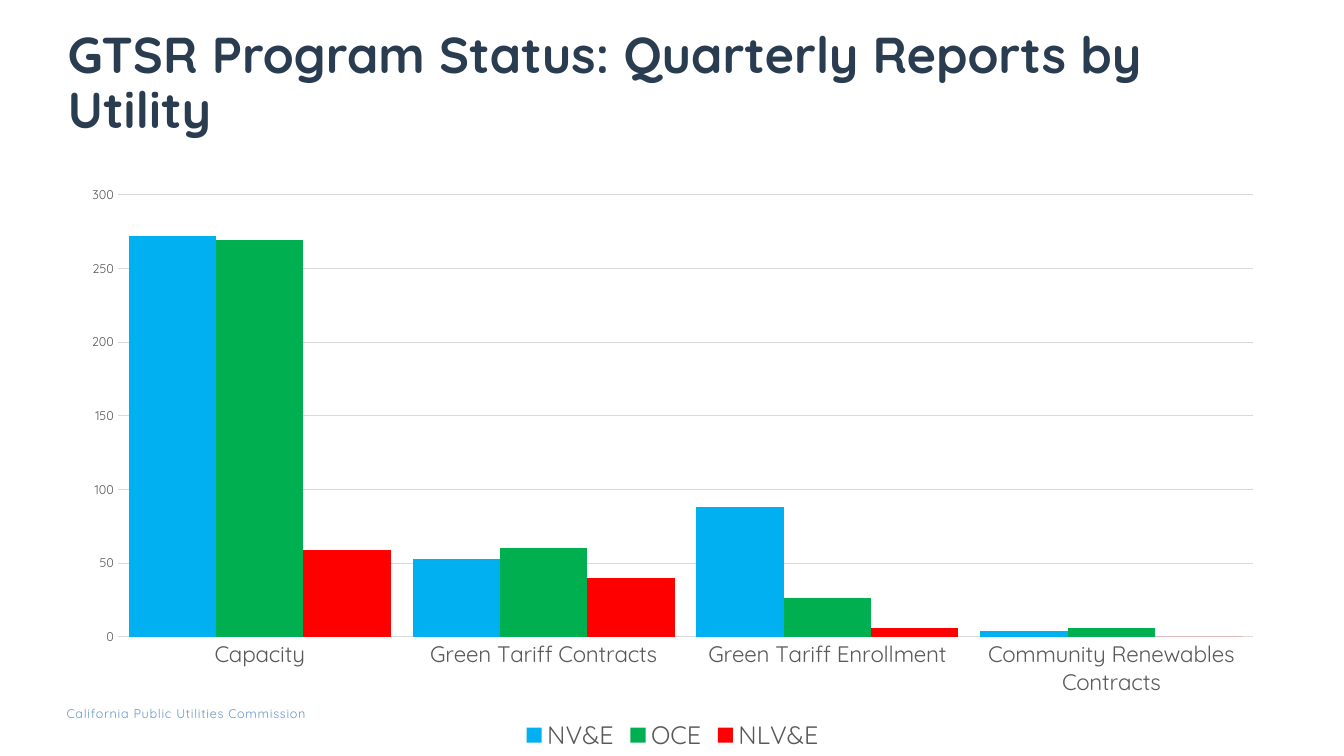
from dataclasses import dataclass

from pptx import Presentation
from pptx.chart.data import CategoryChartData
from pptx.dml.color import RGBColor
from pptx.enum.chart import XL_CHART_TYPE, XL_LEGEND_POSITION, XL_TICK_MARK
from pptx.enum.text import MSO_ANCHOR
from pptx.util import Inches, Pt

COLUMNS = XL_CHART_TYPE.COLUMN_CLUSTERED
LEGEND_BOTTOM = XL_LEGEND_POSITION.BOTTOM
NO_TICK = XL_TICK_MARK.NONE
TOP = MSO_ANCHOR.TOP
BOTTOM = MSO_ANCHOR.BOTTOM


@dataclass(frozen=True)
class Theme:
    font: str = "Quicksand"
    title: str = "2A3C50"
    footer: str = "6996C9"
    label: str = "595959"
    grid: str = "D9D9D9"
    title_size: int = 36
    footer_size: int = 9
    value_size: int = 9
    category_size: int = 16
    legend_size: int = 18
    line_width: float = 0.75


THEME = Theme()

CATEGORIES = (
    "Capacity",
    "Green Tariff Contracts",
    "Green Tariff Enrollment",
    "Community Renewables Contracts",
)
UTILITIES = (
    ("NV&E", "00B0F0", (272, 53, 88, 4)),
    ("OCE", "00B050", (269, 60, 26, 6)),
    ("NLV&E", "FF0000", (59, 40, 6, 0)),
)


class SlideBuilder:
    def __init__(self, page, theme):
        self.page = page
        self.theme = theme

    def style_font(self, font, size, color, bold=False):
        font.name = self.theme.font
        font.size = Pt(size)
        font.bold = bold
        font.color.rgb = RGBColor.from_string(color)

    def style_line(self, line):
        line.color.rgb = RGBColor.from_string(self.theme.grid)
        line.width = Pt(self.theme.line_width)

    def text(self, words, place, size, color, bold=False, anchor=TOP,
             margins=(0, 0, 0, 0), line_spacing=1.0, tracking=0):
        box = self.page.shapes.add_textbox(*map(Inches, place))
        frame = box.text_frame
        frame.word_wrap = True
        frame.vertical_anchor = anchor
        (frame.margin_left, frame.margin_top,
         frame.margin_right, frame.margin_bottom) = map(Inches, margins)
        para = frame.paragraphs[0]
        para.line_spacing = line_spacing
        span = para.add_run()
        span.text = words
        self.style_font(span.font, size, color, bold)
        if tracking:
            span.font._element.set("spc", str(int(tracking * 100)))

    def column_chart(self, categories, series_rows, place):
        theme = self.theme
        data = CategoryChartData(number_format="0")
        data.categories = categories
        for name, _, values in series_rows:
            data.add_series(name, values)
        frame = self.page.shapes.add_chart(COLUMNS, *map(Inches, place), data)
        chart = frame.chart
        chart.has_title = False
        self.style_font(chart.font, theme.value_size, theme.label)

        plot = chart.plots[0]
        plot.gap_width = 25
        plot.overlap = 0
        plot.vary_by_categories = False
        for series, (_, color, _) in zip(plot.series, series_rows):
            series.format.fill.solid()
            series.format.fill.fore_color.rgb = RGBColor.from_string(color)

        sizes = (
            (chart.category_axis, theme.category_size),
            (chart.value_axis, theme.value_size),
        )
        for axis, size in sizes:
            axis.major_tick_mark = NO_TICK
            axis.minor_tick_mark = NO_TICK
            self.style_font(axis.tick_labels.font, size, theme.label)
        self.style_line(chart.category_axis.format.line)

        values_axis = chart.value_axis
        values_axis.minimum_scale = 0
        values_axis.maximum_scale = 300
        values_axis.major_unit = 50
        values_axis.format.line.fill.background()
        values_axis.has_major_gridlines = True
        self.style_line(values_axis.major_gridlines.format.line)

        chart.has_legend = True
        chart.legend.position = LEGEND_BOTTOM
        chart.legend.include_in_layout = False
        self.style_font(chart.legend.font, theme.legend_size, theme.label)


def main():
    deck = Presentation()
    deck.slide_width = Inches(13.33)
    deck.slide_height = Inches(7.5)
    page = deck.slides.add_slide(deck.slide_layouts[6])
    builder = SlideBuilder(page, THEME)

    builder.text("California Public Utilities Commission", (0.66, 7, 3.21, 0.15),
                 THEME.footer_size, THEME.footer, tracking=0.5)
    builder.text("GTSR Program Status: Quarterly Reports by Utility",
                 (0.67, 0.4, 12, 1.03), THEME.title_size, THEME.title, bold=True,
                 anchor=BOTTOM, margins=(0, 0.05, 0.1, 0.05), line_spacing=0.9)
    builder.column_chart(CATEGORIES, UTILITIES, (0.67, 1.74, 12, 5.76))

    deck.save("out.pptx")


if __name__ == "__main__":
    main()
